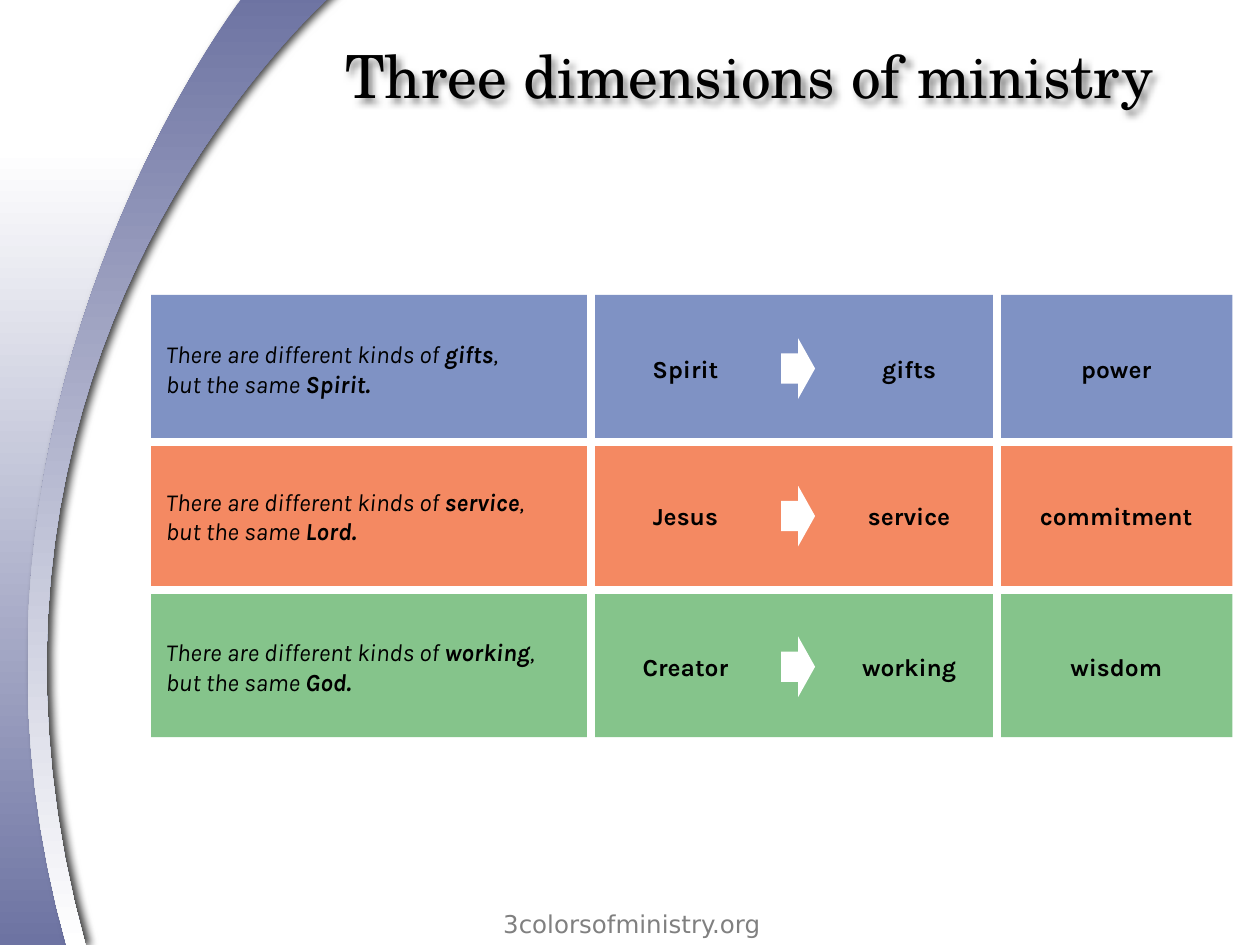
from lxml.etree import SubElement
from pptx import Presentation
from pptx.dml.color import RGBColor
from pptx.enum.shapes import MSO_CONNECTOR, MSO_SHAPE
from pptx.enum.text import MSO_ANCHOR, PP_ALIGN
from pptx.oxml.ns import qn
from pptx.util import Pt

# Content
TITLE = "Three dimensions of ministry"
FOOTER = "3colorsofministry.org"
# row colour, text centre, gift, giver in the verse, source, outcome
DIMENSIONS = [
    ("7F92C4", 210.6, "gifts", "Spirit", "Spirit", "power"),
    ("F48962", 294.9, "service", "Lord", "Jesus", "commitment"),
    ("85C48B", 381, "working", "God", "Creator", "wisdom"),
]
SWOOSH_COLOR, WHITE, BLACK = "6D73A2", "FFFFFF", "000000"
BODY_FONT = "Karla"

# Layout, in points
GRID_LEFT, GRID_TOP, GRID_WIDTH, ROW_HEIGHT = 86.4, 168.5, 617.8, 84.24
VERSE_LEFT, VERSE_WIDTH, VERSE_HEIGHT = 87.8, 249.8, 42.5
SOURCE_COLUMN, GIFT_COLUMN, OUTCOME_COLUMN = (337, 109.4), (469.8, 99.4), (571.5, 132.7)
LABEL_HEIGHT = 25.2
ARROW_LEFT, ARROW_WIDTH, ARROW_HEIGHT = 446.4, 19.4, 34.6
DIVIDERS = [  # start and end of each white line
    *((53.3, GRID_TOP + n * ROW_HEIGHT, 727, GRID_TOP + n * ROW_HEIGHT) for n in (1, 2)),
    (337.7, 145.4, 337.7, 451.4),
    (569.5, 160.6, 569.5, 443.5),
]


def color(hex_value):
    return RGBColor.from_string(hex_value)


def curve(start, control_1, control_2, end, steps=40):
    """Points along a cubic curve, both ends included."""
    points = []
    for n in range(steps + 1):
        t = n / steps
        weights = ((1 - t) ** 3, 3 * t * (1 - t) ** 2, 3 * t * t * (1 - t), t ** 3)
        corners = (start, control_1, control_2, end)
        points.append(tuple(sum(w * p[axis] for w, p in zip(weights, corners))
                            for axis in (0, 1)))
    return points


def add_shadow(shape, blur, distance, angle, opacity):
    shape.shadow.inherit = False
    effects = shape._element.spPr.find(qn("a:effectLst"))
    outer = SubElement(effects, qn("a:outerShdw"), blurRad=str(Pt(blur)),
                       dist=str(Pt(distance)), dir=str(angle * 60000),
                       algn="ctr", rotWithShape="0")
    shade = SubElement(outer, qn("a:srgbClr"), val=BLACK)
    SubElement(shade, qn("a:alpha"), val=str(opacity * 1000))


def add_gradient_outline(slide, points, top_color, bottom_color):
    points = [(Pt(x), Pt(y)) for x, y in points]
    builder = slide.shapes.build_freeform(*points[0])
    builder.add_line_segments(points[1:], close=True)
    outline = builder.convert_to_shape()
    outline.shadow.inherit = False
    outline.line.fill.background()
    outline.fill.gradient()
    outline.fill.gradient_angle = 270
    for stop, hex_value in zip(outline.fill.gradient_stops, (top_color, bottom_color)):
        stop.color.rgb = color(hex_value)
    return outline


def add_block(slide, preset, left, top, width, height, fill):
    block = slide.shapes.add_shape(preset, Pt(left), Pt(top), Pt(width), Pt(height))
    block.shadow.inherit = False
    block.fill.solid()
    block.fill.fore_color.rgb = color(fill)
    block.line.fill.background()


def set_font(font, name, size, hex_value, bold=None, italic=None):
    font.name, font.size, font.bold, font.italic = name, Pt(size), bold, italic
    font.color.rgb = color(hex_value)


def add_text_frame(slide, left, top, width, height, anchor=MSO_ANCHOR.MIDDLE):
    frame = slide.shapes.add_textbox(Pt(left), Pt(top), Pt(width), Pt(height)).text_frame
    frame.word_wrap = True
    frame.vertical_anchor = anchor
    return frame


def add_label(slide, text, column, centre):
    left, width = column
    frame = add_text_frame(slide, left, centre - LABEL_HEIGHT / 2, width, LABEL_HEIGHT)
    label = frame.paragraphs[0]
    label.text, label.alignment = text, PP_ALIGN.CENTER
    set_font(label.font, BODY_FONT, 14, BLACK, bold=True)


def add_verse(slide, gift, giver, centre):
    frame = add_text_frame(slide, VERSE_LEFT, centre - VERSE_HEIGHT / 2,
                           VERSE_WIDTH, VERSE_HEIGHT)
    lines = [
        [("There are different kinds of ", False), (gift, True), (",", False)],
        [("but the same ", False), (giver + ".", True)],
    ]
    for line, paragraph in zip(lines, (frame.paragraphs[0], frame.add_paragraph())):
        set_font(paragraph.font, BODY_FONT, 14, BLACK, italic=True)
        for text, bold in line:
            run = paragraph.add_run()
            run.text, run.font.bold = text, bold


def main():
    presentation = Presentation()
    presentation.slide_width, presentation.slide_height = Pt(720), Pt(540)
    slide = presentation.slides.add_slide(presentation.slide_layouts[5])

    # Curved side decoration
    side = [(0, 84.2)] + curve((108.7, 84.2), (-25.2, 311), (36, 496), (46.8, 540)) + [(0, 540)]
    add_gradient_outline(slide, side, WHITE, SWOOSH_COLOR)
    swoosh = (curve((49, 540.7), (-46.1, 196.6), (192.2, -5), (192.2, -5))
              + curve((141.8, -5.8), (141.8, -5.8), (-48.2, 234.7), (38.2, 540.7)))
    band = add_gradient_outline(slide, swoosh, SWOOSH_COLOR, WHITE)
    add_shadow(band, blur=5, distance=3, angle=0, opacity=75)

    # Title
    title = slide.shapes.title
    title.left, title.top, title.width, title.height = Pt(190), Pt(0), Pt(530), Pt(85.7)
    title.text_frame.text = TITLE
    title.text_frame.vertical_anchor = MSO_ANCHOR.MIDDLE
    heading = title.text_frame.paragraphs[0]
    heading.alignment = PP_ALIGN.LEFT
    set_font(heading.font, "TeX Gyre Schola", 34, BLACK)
    add_shadow(title, blur=4, distance=3, angle=45, opacity=50)

    # Footer
    frame = add_text_frame(slide, 247, 516.2, 228.2, 23.8, MSO_ANCHOR.TOP)
    footer = frame.paragraphs[0]
    footer.text, footer.alignment = FOOTER, PP_ALIGN.CENTER
    set_font(footer.font, "DejaVu Sans", 14, "808080")

    # Coloured rows and white dividers
    for index, (fill, *_) in enumerate(DIMENSIONS):
        add_block(slide, MSO_SHAPE.RECTANGLE, GRID_LEFT, GRID_TOP + index * ROW_HEIGHT,
                  GRID_WIDTH, ROW_HEIGHT, fill)
    for ends in DIVIDERS:
        divider = slide.shapes.add_connector(MSO_CONNECTOR.STRAIGHT, *map(Pt, ends))
        divider.line.color.rgb = color(WHITE)
        divider.line.width = Pt(4.5)
        SubElement(divider._element.spPr, qn("a:effectLst"))

    # Row texts and arrows
    for _, centre, gift, giver, source, outcome in DIMENSIONS:
        add_verse(slide, gift, giver, centre)
        add_label(slide, source, SOURCE_COLUMN, centre)
        add_label(slide, gift, GIFT_COLUMN, centre)
        add_label(slide, outcome, OUTCOME_COLUMN, centre)
        add_block(slide, MSO_SHAPE.RIGHT_ARROW, ARROW_LEFT, centre - ARROW_HEIGHT / 2,
                  ARROW_WIDTH, ARROW_HEIGHT, WHITE)

    presentation.save("out.pptx")


if __name__ == "__main__":
    main()
